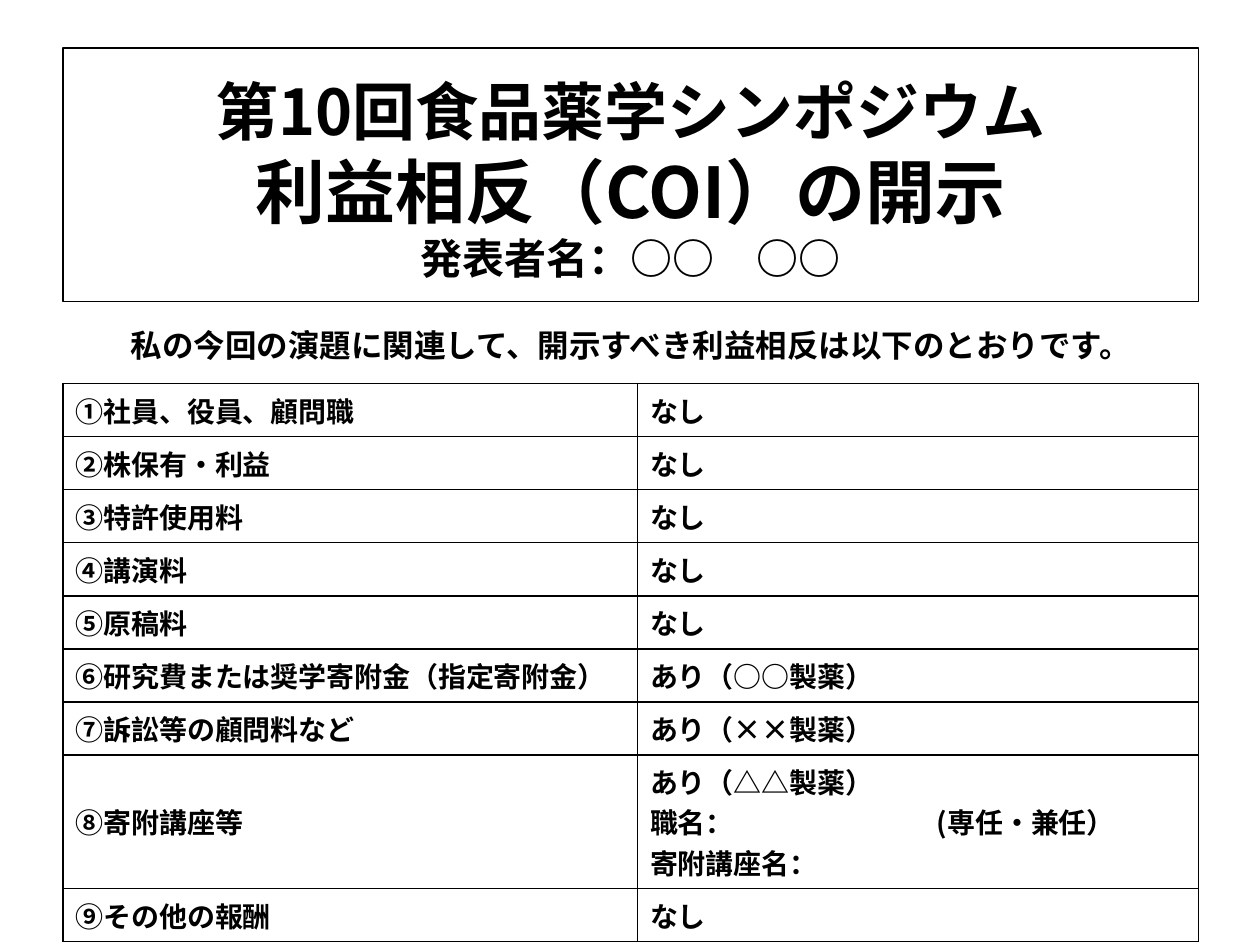
from lxml.etree import SubElement
from pptx import Presentation
from pptx.dml.color import RGBColor
from pptx.enum.shapes import MSO_SHAPE as Shape
from pptx.enum.text import MSO_ANCHOR as Anchor, PP_ALIGN as Align
from pptx.oxml.ns import qn
from pptx.util import Cm, Pt

COLORS = {"ink": "000000"}
FONT = "Noto Sans CJK JP"
LEFT, WIDTH = Cm(1.27), Cm(22.89)
COLUMN_WIDTHS = [Cm(11.58), Cm(11.31)]
ROW_HEIGHT, EXTRA_LINE_HEIGHT = Cm(1.07), Cm(0.81)
NOTE_TAB = Cm(5.78)

TITLE = [
    ("第10回食品薬学シンポジウム", 36),
    ("利益相反（COI）の開示", 40),
    ("発表者名：○○\u3000○○", 24),
]
STATEMENT = "私の今回の演題に関連して、開示すべき利益相反は以下のとおりです。"
DISCLOSURES = [
    ("①社員、役員、顧問職", ["なし"]),
    ("②株保有・利益", ["なし"]),
    ("③特許使用料", ["なし"]),
    ("④講演料", ["なし"]),
    ("⑤原稿料", ["なし"]),
    ("⑥研究費または奨学寄附金（指定寄附金）", ["あり（○○製薬）"]),
    ("⑦訴訟等の顧問料など", ["あり（××製薬）"]),
    ("⑧寄附講座等", ["あり（△△製薬）", "職名：\t(専任・兼任）", "寄附講座名："]),
    ("⑨その他の報酬", ["なし"]),
]


def set_format(target, **values):
    for name, value in values.items():
        setattr(target, name, value)


def add_span(para, text, size):
    span = para.add_run()
    span.text = text
    set_format(span.font, name=FONT, size=Pt(size), bold=True)
    span.font.color.rgb = RGBColor.from_string(COLORS["ink"])
    SubElement(span.font._element, qn("a:ea"), typeface=FONT)


def add_tab_stop(para, position):
    tabs = SubElement(para._p.get_or_add_pPr(), qn("a:tabLst"))
    SubElement(tabs, qn("a:tab"), pos=str(int(position)), algn="l")


def add_title(page):
    box = page.shapes.add_shape(Shape.RECTANGLE, LEFT, Cm(0.97), WIDTH, Cm(5.11))
    box.shadow.inherit = False
    box.fill.background()
    box.line.color.rgb = RGBColor.from_string(COLORS["ink"])
    box.line.width = Pt(0.75)
    frame = box.text_frame
    set_format(frame, word_wrap=True, vertical_anchor=Anchor.MIDDLE, margin_top=Cm(0.25))
    para = frame.paragraphs[0]
    para.alignment = Align.CENTER
    for index, (text, size) in enumerate(TITLE):
        if index:
            para.add_line_break()
        add_span(para, text, size)


def add_statement(page):
    box = page.shapes.add_textbox(LEFT, Cm(6.45), WIDTH, Cm(1.28))
    box.text_frame.word_wrap = True
    para = box.text_frame.paragraphs[0]
    para.alignment = Align.CENTER
    add_span(para, STATEMENT, 18)


def add_borders(cell):
    properties = cell._tc.get_or_add_tcPr()
    for side in ("lnL", "lnR", "lnT", "lnB"):
        line = SubElement(properties, qn(f"a:{side}"), w=str(Pt(1)))
        fill = SubElement(line, qn("a:solidFill"))
        SubElement(fill, qn("a:srgbClr"), val=COLORS["ink"])


def fill_cell(cell, lines):
    cell.vertical_anchor = Anchor.MIDDLE
    add_borders(cell)
    cell.fill.background()
    frame = cell.text_frame
    for index, text in enumerate(lines):
        para = frame.add_paragraph() if index else frame.paragraphs[0]
        if "\t" in text:
            add_tab_stop(para, NOTE_TAB)
        add_span(para, text, 16)


def add_disclosure_table(page):
    heights = [
        ROW_HEIGHT + EXTRA_LINE_HEIGHT * (len(answers) - 1)
        for _, answers in DISCLOSURES
    ]
    table = page.shapes.add_table(
        len(heights), len(COLUMN_WIDTHS), LEFT, Cm(7.73), WIDTH, sum(heights)
    ).table
    set_format(table, first_row=False, horz_banding=False)
    for column, width in zip(table.columns, COLUMN_WIDTHS):
        column.width = width
    for row, height, (item, answers) in zip(table.rows, heights, DISCLOSURES):
        row.height = height
        for cell, lines in zip(row.cells, ([item], answers)):
            fill_cell(cell, lines)


def main():
    deck = Presentation()
    set_format(deck, slide_width=Cm(25.4), slide_height=Cm(19.05))
    page = deck.slides.add_slide(deck.slide_layouts[6])
    add_title(page)
    add_statement(page)
    add_disclosure_table(page)
    deck.save("out.pptx")


if __name__ == "__main__":
    main()
